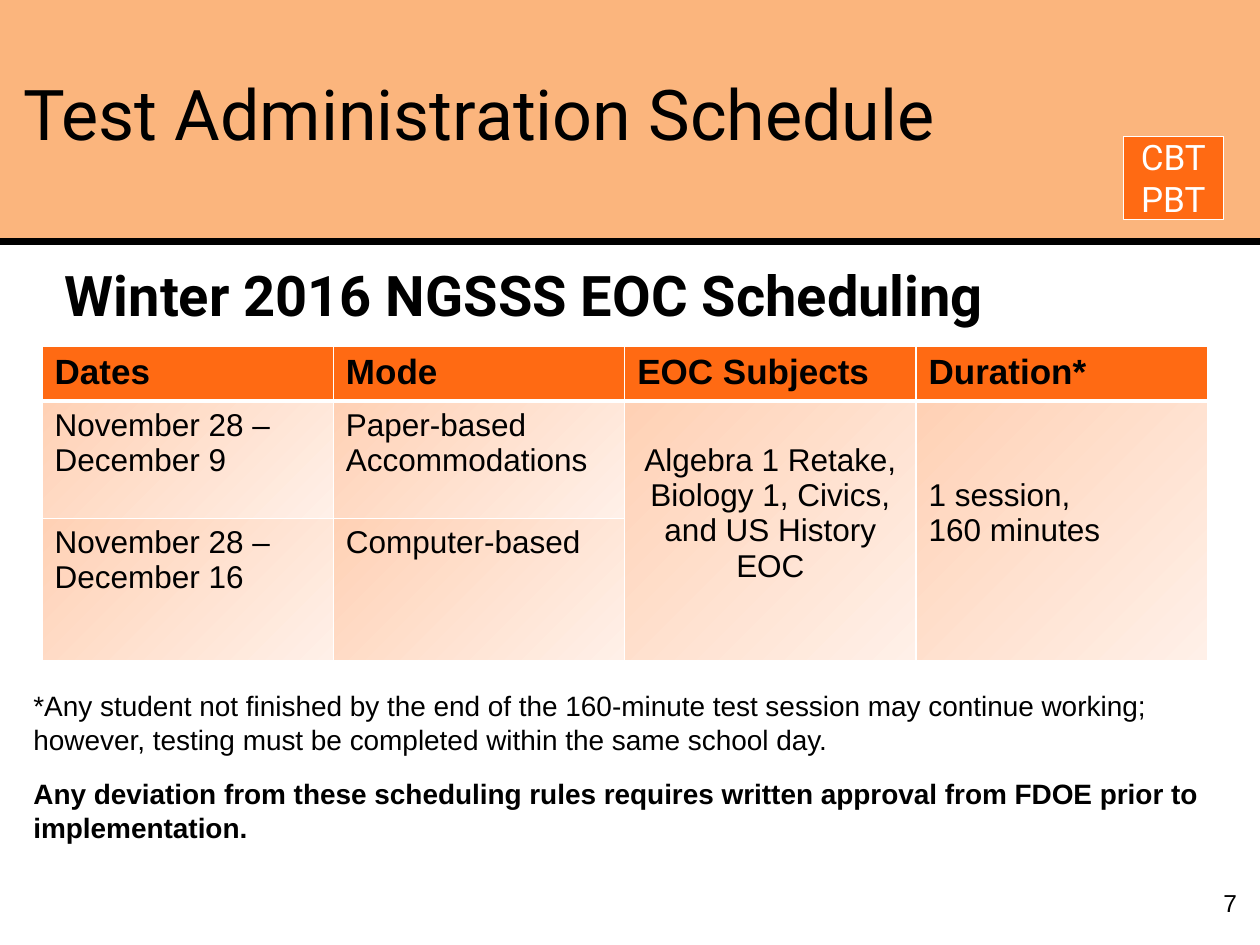
from lxml import etree
from pptx import Presentation
from pptx.dml.color import RGBColor
from pptx.enum.shapes import MSO_CONNECTOR, MSO_SHAPE
from pptx.enum.text import MSO_ANCHOR, MSO_AUTO_SIZE, PP_ALIGN
from pptx.oxml.ns import qn
from pptx.util import Inches, Pt

LEFT, MID, RIGHT = PP_ALIGN.LEFT, PP_ALIGN.CENTER, PP_ALIGN.RIGHT
TOP, CENTER = MSO_ANCHOR.TOP, MSO_ANCHOR.MIDDLE
RECT, LINE = MSO_SHAPE.RECTANGLE, MSO_CONNECTOR.STRAIGHT
UNIT = Inches(10) / 120
BLACK, WHITE, ORANGE, PEACH = "000000", "FFFFFF", "FF6A13", "FBB57D"
FADE = ("FFD1B5", "FFF0E8")
HEADS = ["Dates", "Mode", "EOC Subjects", "Duration*"]
ROWS = [
    ["November 28 – December 9", "Paper-based Accommodations",
     "Algebra 1 Retake, Biology 1, Civics, and US History EOC",
     "1 session,\n160 minutes"],
    ["November 28 – December 16", "Computer-based"],
]
NOTES = [
    "*Any student not finished by the end of the 160-minute test session may "
    "continue working; however, testing must be completed within the same "
    "school day.",
    "Any deviation from these scheduling rules requires written approval from "
    "FDOE prior to implementation.",
]


def grid(*cells):
    return [round(cell * UNIT) for cell in cells]


def color(code):
    return RGBColor.from_string(code)


def apply(item, values):
    for name, value in values.items():
        setattr(item, name, value)


def write(frame, text, font, size, code=BLACK, bold=False, **para):
    frame.text = text
    frame.word_wrap = True
    for line in frame.paragraphs:
        apply(line, para)
        for run in line.runs:
            apply(run.font, {"name": font, "size": Pt(size), "bold": bold})
            run.font.color.rgb = color(code)


def block(slide, box, fill, edge=None):
    shape = slide.shapes.add_shape(RECT, *grid(*box))
    shape.shadow.inherit = False
    shape.fill.solid()
    shape.fill.fore_color.rgb = color(fill)
    if edge:
        shape.line.color.rgb = color(edge)
        shape.line.width = Pt(0.75)
    else:
        shape.line.fill.background()
    return shape


def label(slide, box, *args, **para):
    frame = slide.shapes.add_textbox(*grid(*box)).text_frame
    write(frame, *args, **para)
    return frame


def header(slide, box):
    x, y, w, h = box
    block(slide, box, PEACH)
    rule = slide.shapes.add_connector(LINE, *grid(x, y + h, x + w, y + h))
    rule.line.color.rgb = color(BLACK)
    rule.line.width = Pt(4)
    etree.SubElement(rule._element.spPr, qn("a:effectLst"))
    title = slide.shapes.title
    slide.shapes._spTree.append(title._element)
    spot = grid(x + 1, y + 2, w - 2, h - 4)
    apply(title, dict(zip(("left", "top", "width", "height"), spot)))
    write(title.text_frame, "Test Administration Schedule", "Roboto", 40,
          alignment=LEFT, line_spacing=0.8)
    apply(title.text_frame, {"vertical_anchor": CENTER,
                             "auto_size": MSO_AUTO_SIZE.NONE})


def badge(slide, box):
    frame = block(slide, box, ORANGE, WHITE).text_frame
    write(frame, "CBT\nPBT", "Roboto", 20, WHITE, alignment=MID)
    frame.vertical_anchor = CENTER


def border(cell, base):
    props = cell._tc.get_or_add_tcPr()
    for spot, (side, width) in enumerate(
            {"lnL": 1, "lnR": 1, "lnT": 1, "lnB": base}.items()):
        line = etree.Element(qn("a:" + side), w=str(Pt(width)))
        fill = etree.SubElement(line, qn("a:solidFill"))
        etree.SubElement(fill, qn("a:srgbClr"), val=WHITE)
        props.insert(spot, line)


def shade(cell, head):
    if head:
        cell.fill.solid()
        cell.fill.fore_color.rgb = color(ORANGE)
        return
    cell.fill.gradient()
    cell.fill.gradient_angle = 315
    for stop, code in zip(cell.fill.gradient_stops, FADE):
        stop.color.rgb = color(code)


def schedule(slide, box, highs):
    data = [HEADS] + ROWS
    table = slide.shapes.add_table(
        len(data), len(HEADS), *grid(*box)).table
    for row, high in zip(table.rows, grid(*highs)):
        row.height = high
    for col in (2, 3):
        table.cell(1, col).merge(table.cell(2, col))
    for r, row in enumerate(data):
        for c in range(len(HEADS)):
            cell = table.cell(r, c)
            shade(cell, r == 0)
            border(cell, 3 if r == 0 else 1)
            if c < len(row):
                write(cell.text_frame, row[c], "Arial", 18 if r else 20,
                      bold=r == 0, alignment=MID if r and c == 2 else LEFT)
                cell.vertical_anchor = TOP
    for col, lines in ((2, 1), (3, 2)):
        table.cell(1, col).margin_top = Inches(0.05 + 0.28 * lines)


def notes(slide, box):
    frame = label(slide, box, "\n".join(NOTES), "Arial", 16,
                  space_before=Pt(6), space_after=Pt(6))
    frame.paragraphs[1].runs[0].font.bold = True


def main():
    deck = Presentation()
    apply(deck, {"slide_width": Inches(10), "slide_height": Inches(7.5)})
    slide = deck.slides.add_slide(deck.slide_layouts[5])
    header(slide, (0, 0, 120, 23))
    label(slide, (5, 26, 113, 7), "Winter 2016 NGSSS EOC Scheduling",
          "Roboto", 32, bold=True, line_spacing=0.7,
          space_before=Pt(6.4), space_after=Pt(6))
    label(slide, (112, 84, 7, 4.4), "7", "Arial", 14, alignment=RIGHT)
    schedule(slide, (4, 33, 111, 29.6), (4.9, 11.2, 13.5))
    notes(slide, (2, 65, 116, 21.4))
    badge(slide, (107, 13, 9.5, 7.9))
    deck.save("out.pptx")


if __name__ == "__main__":
    main()
